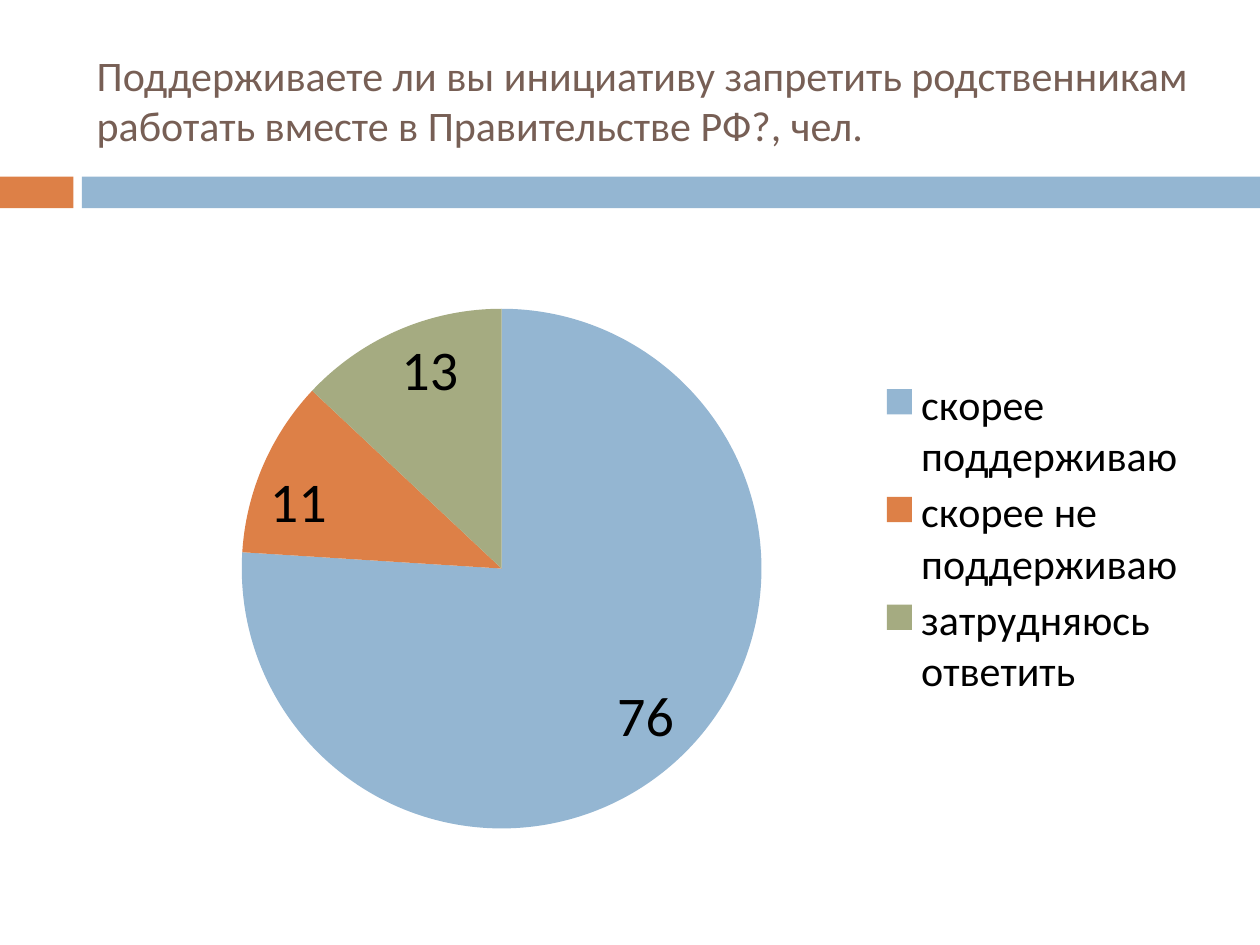
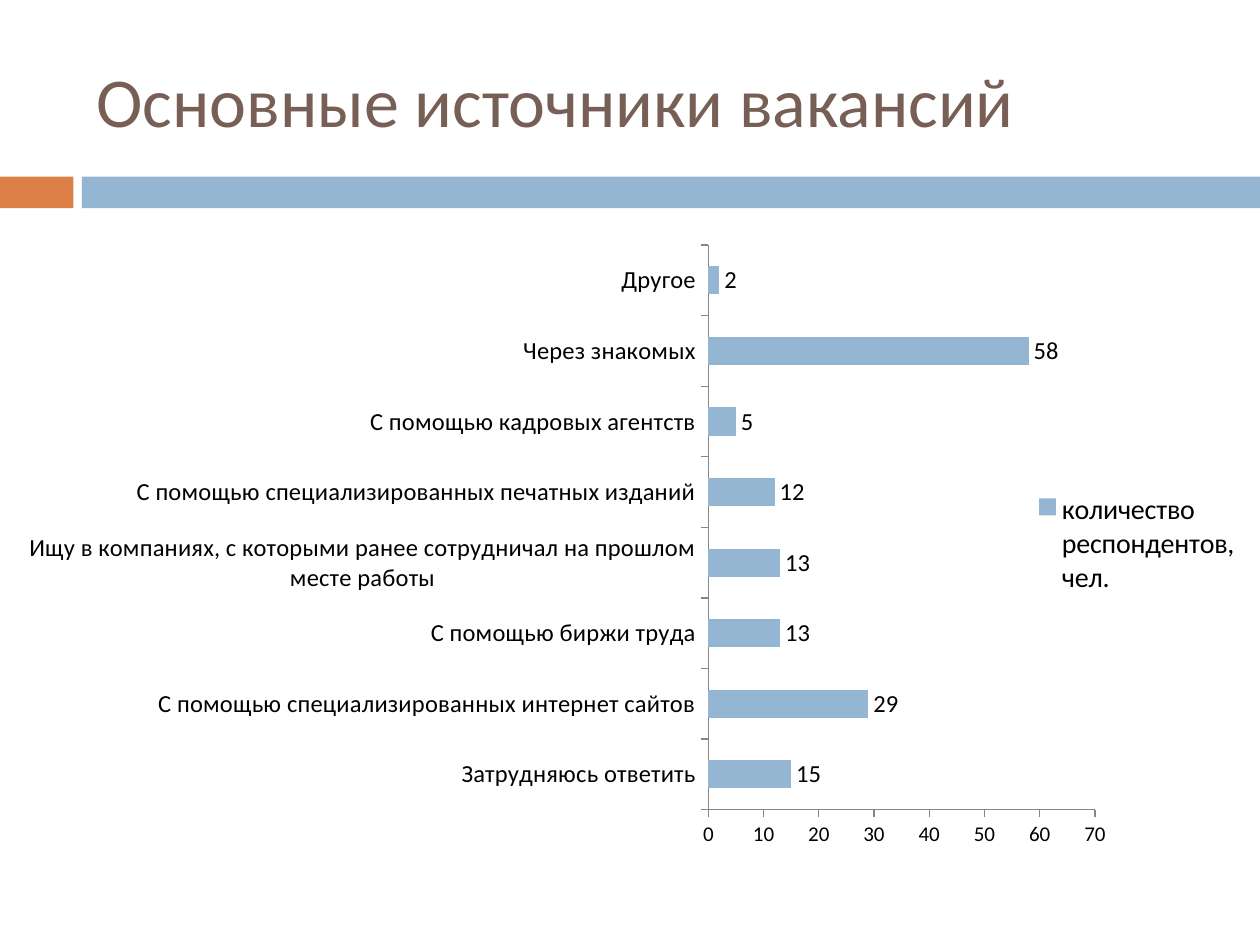
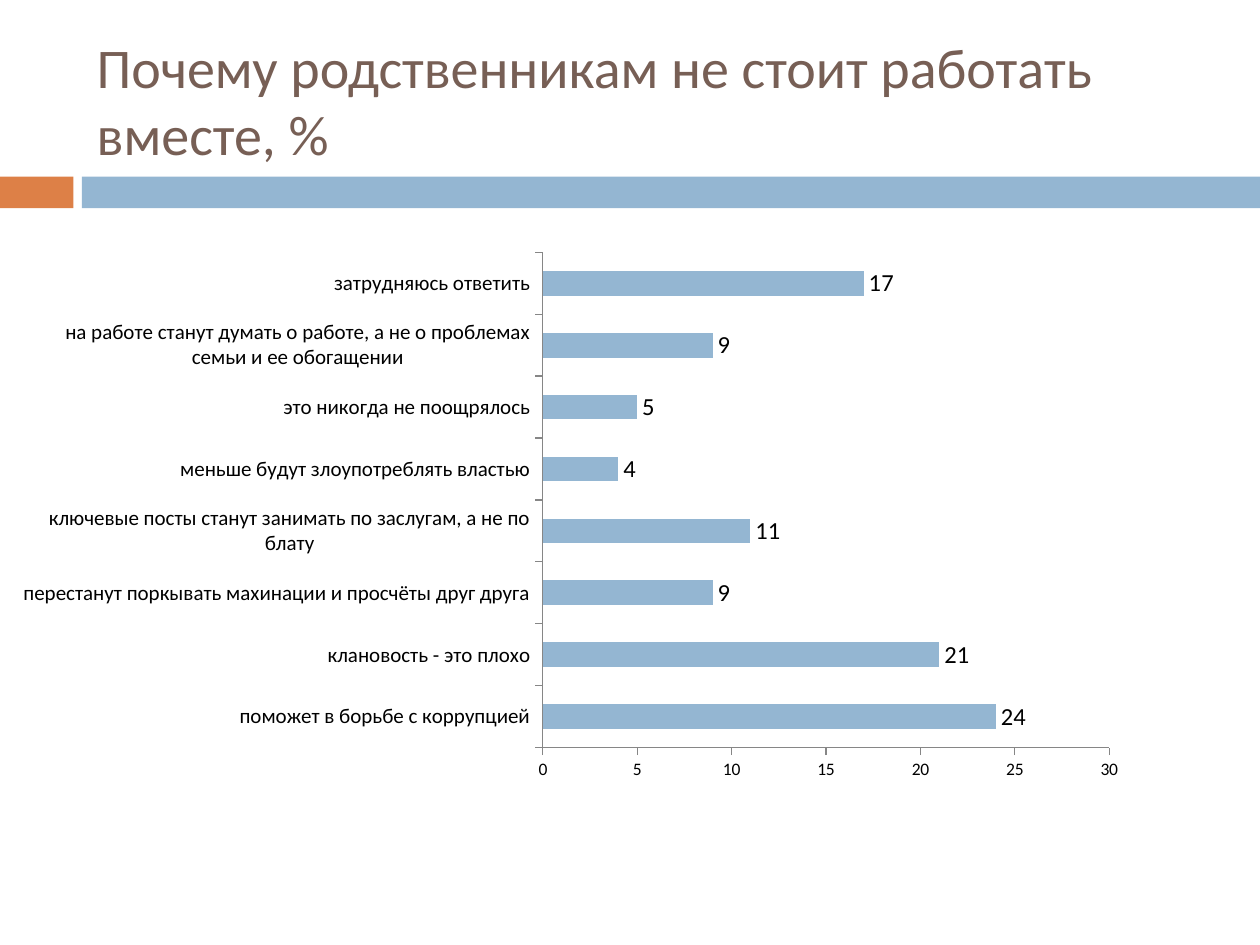
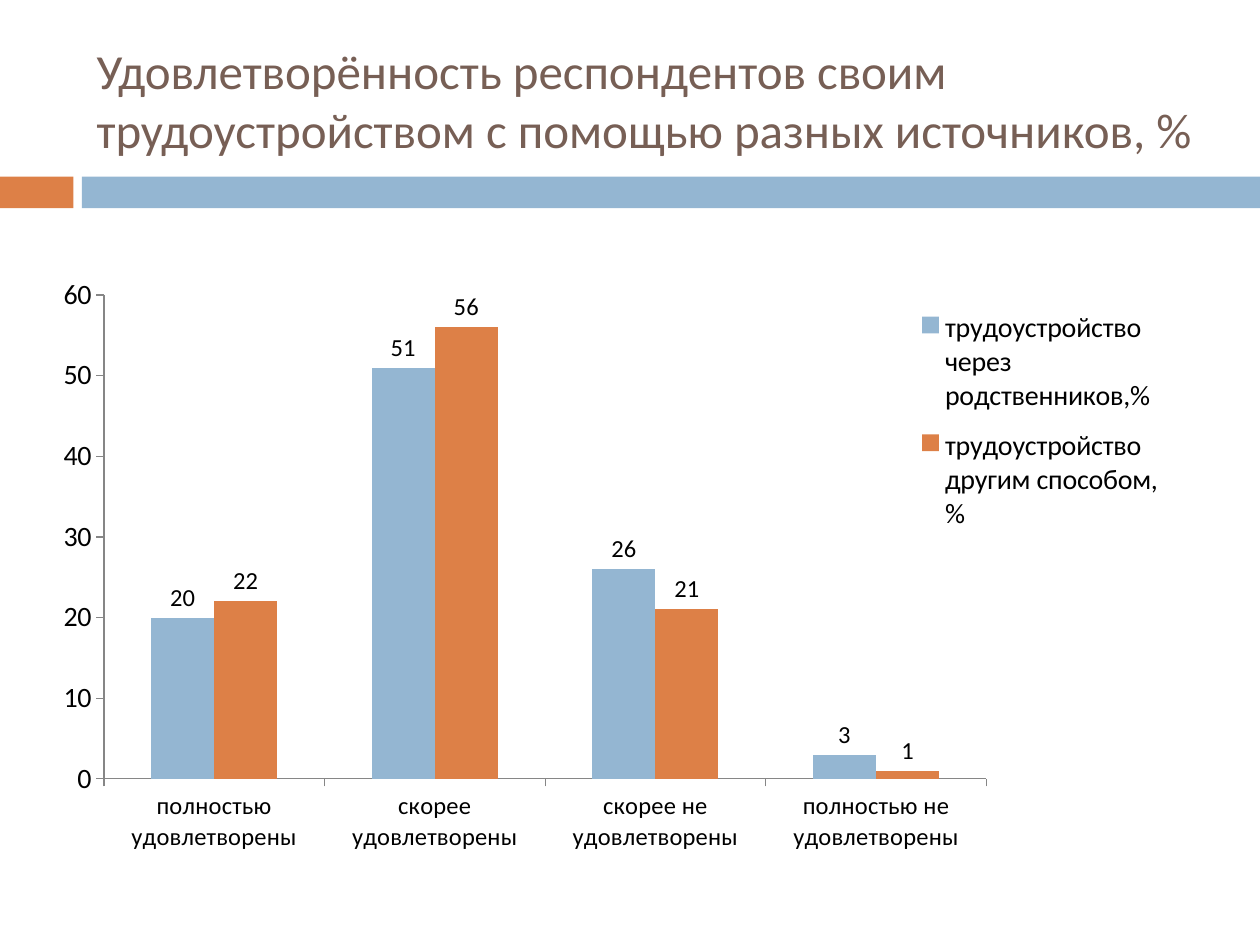
from pptx import Presentation
from pptx.chart.data import CategoryChartData
from pptx.dml.color import RGBColor
from pptx.enum.chart import XL_CHART_TYPE, XL_LABEL_POSITION, XL_LEGEND_POSITION, XL_TICK_MARK
from pptx.enum.shapes import MSO_SHAPE
from pptx.enum.text import MSO_ANCHOR
from pptx.oxml import parse_xml
from pptx.oxml.ns import nsdecls, qn
from pptx.util import Cm, Pt

FONT = "Calibri"
BLUE, RUST, OLIVE = "94B6D2", "DD8047", "A5AB81"
BROWN, BLACK, GREY = "775F55", "000000", "868686"


def color(code):
    """Turn a hex string into a colour."""
    return RGBColor.from_string(code)


def style(font, size, code=BLACK):
    """Set typeface, size and colour of a font."""
    font.name, font.size = FONT, Pt(size)
    font.color.rgb = color(code)


def paint(fill, code):
    """Give a fill one solid colour."""
    fill.solid()
    fill.fore_color.rgb = color(code)


def band(slide, box, code):
    """Draw one flat bar of the divider."""
    bar = slide.shapes.add_shape(MSO_SHAPE.RECTANGLE, *map(Cm, box))
    bar.shadow.inherit = False
    paint(bar.fill, code)
    bar.line.fill.background()


def frame(deck, title, size):
    """Add a slide with the divider and its title."""
    slide = deck.slides.add_slide(deck.slide_layouts[6])
    band(slide, (0, 3.56, 1.48, 0.64), RUST)
    band(slide, (1.65, 3.56, 23.75, 0.64), BLUE)
    text = slide.shapes.add_textbox(Cm(1.7), Cm(0.64), Cm(22.66), Cm(2.74)).text_frame
    text.word_wrap = True
    text.vertical_anchor = MSO_ANCHOR.MIDDLE
    text.text = title
    style(text.paragraphs[0].font, size, BROWN)
    return slide


def place(chart, tag, index, area, inner=False):
    """Fix a chart part at fractions of the chart area."""
    part = chart.element.find(".//" + qn(tag))
    for old in part.findall(qn("c:layout")):
        part.remove(old)
    rows = [("layoutTarget", "inner")] if inner else []
    rows += [("xMode", "edge"), ("yMode", "edge"), *zip("xywh", area)]
    body = "".join(f'<c:{name} val="{val}"/>' for name, val in rows)
    part.insert(index, parse_xml(
        f'<c:layout {nsdecls("c")}><c:manualLayout>{body}</c:manualLayout></c:layout>'))


def graph(slide, kind, box, cats, rows, plot, spot, size):
    """Add a chart with value labels and a fixed plot area."""
    data = CategoryChartData()
    data.categories = cats
    for name, vals in rows:
        data.add_series(name, vals)
    chart = slide.shapes.add_chart(kind, *map(Cm, box), data).chart
    chart.has_title = chart.has_legend = False
    style(chart.font, 10)
    body = chart.plots[0]
    body.vary_by_categories = kind == XL_CHART_TYPE.PIE
    body.has_data_labels = True
    tags = body.data_labels
    tags.show_value, tags.position = True, spot
    style(tags.font, size)
    place(chart, "c:plotArea", 0, plot, True)
    return chart


def key(chart, size, area):
    """Add a legend at the right."""
    chart.has_legend = True
    chart.legend.position = XL_LEGEND_POSITION.RIGHT
    chart.legend.include_in_layout = False
    style(chart.legend.font, size)
    place(chart, "c:legend", 1, area)


def pie(slide, box, cats, vals, plot):
    """Draw a pie with one colour per slice."""
    chart = graph(slide, XL_CHART_TYPE.PIE, box, cats, [("Series 1", vals)],
                  plot, XL_LABEL_POSITION.INSIDE_END, 32)
    for index, code in enumerate((BLUE, RUST, OLIVE)):
        paint(chart.plots[0].series[0].points[index].format.fill, code)
    return chart


def bars(slide, kind, box, cats, rows, plot, sizes, top, step):
    """Draw bars or columns with plain axes."""
    chart = graph(slide, kind, box, cats, rows, plot, XL_LABEL_POSITION.OUTSIDE_END, 14)
    chart.plots[0].gap_width = 150
    for line, code in zip(chart.plots[0].series, (BLUE, RUST)):
        line.invert_if_negative = False
        paint(line.format.fill, code)
    for axis, size in zip((chart.category_axis, chart.value_axis), sizes):
        axis.has_major_gridlines = False
        axis.major_tick_mark = XL_TICK_MARK.OUTSIDE
        axis.minor_tick_mark = XL_TICK_MARK.NONE
        axis.format.line.color.rgb = color(GREY)
        style(axis.tick_labels.font, size)
    scale = chart.value_axis
    scale.minimum_scale, scale.maximum_scale, scale.major_unit = 0, top, step
    return chart


def main():
    """Build and save the four slides."""
    deck = Presentation()
    deck.slide_width, deck.slide_height = Cm(25.4), Cm(19.05)

    slide = frame(deck, "Поддерживаете ли вы инициативу запретить родственникам "
                  "работать вместе в Правительстве РФ?, чел.", 24)
    chart = pie(slide, (1.57, 4.57, 22.63, 12.5),
                ["скорее поддерживаю", "скорее не поддерживаю", "затрудняюсь ответить"],
                (76, 11, 13), (0.146, 0.132, 0.463, 0.839))
    key(chart, 24, (0.71, 0.24, 0.28, 0.53))

    slide = frame(deck, "Основные источники вакансий", 40)
    cats = ["Затрудняюсь ответить", "С помощью специализированных интернет сайтов",
            "С помощью биржи труда",
            "Ищу в компаниях, с которыми ранее сотрудничал на прошлом месте работы",
            "С помощью специализированных печатных изданий",
            "С помощью кадровых агентств", "Через знакомых", "Другое"]
    chart = bars(slide, XL_CHART_TYPE.BAR_CLUSTERED, (0.58, 4.45, 24.82, 14.02), cats,
                 [("количество респондентов, чел.", (15, 29, 13, 13, 12, 5, 58, 2))],
                 (0.552, 0.035, 0.314, 0.812), (14, 12), 70, 10)
    key(chart, 16, (0.81, 0.38, 0.18, 0.17))

    slide = frame(deck, "Почему родственникам не стоит работать вместе, %", 32)
    cats = ["поможет в борьбе с коррупцией", "клановость - это плохо",
            "перестанут поркывать махинации и просчёты друг друга",
            "ключевые посты станут занимать по заслугам, а не по блату",
            "меньше будут злоупотреблять властью", "это никогда не поощрялось",
            "на работе станут думать о работе, а не о проблемах семьи и ее обогащении",
            "затрудняюсь ответить"]
    bars(slide, XL_CHART_TYPE.BAR_CLUSTERED, (0.41, 4.45, 24.61, 12.5), cats,
         [("Series 1", (24, 21, 9, 11, 4, 5, 9, 17))],
         (0.428, 0.051, 0.464, 0.799), (12, 10), 30, 5)

    slide = frame(deck, "Удовлетворённость респондентов своим трудоустройством "
                  "с помощью разных источников, %", 28)
    cats = ["полностью удовлетворены", "скорее удовлетворены",
            "скорее не удовлетворены", "полностью не удовлетворены"]
    chart = bars(slide, XL_CHART_TYPE.COLUMN_CLUSTERED, (0.79, 5.36, 24.61, 12.04), cats,
                 [("трудоустройство через родственников,%", (20, 51, 26, 3)),
                  ("трудоустройство другим способом,%", (22, 56, 21, 1))],
                 (0.053, 0.049, 0.723, 0.81), (14, 16), 60, 10)
    key(chart, 16, (0.72, 0.05, 0.2, 0.42))

    deck.save("out.pptx")


if __name__ == "__main__":
    main()
